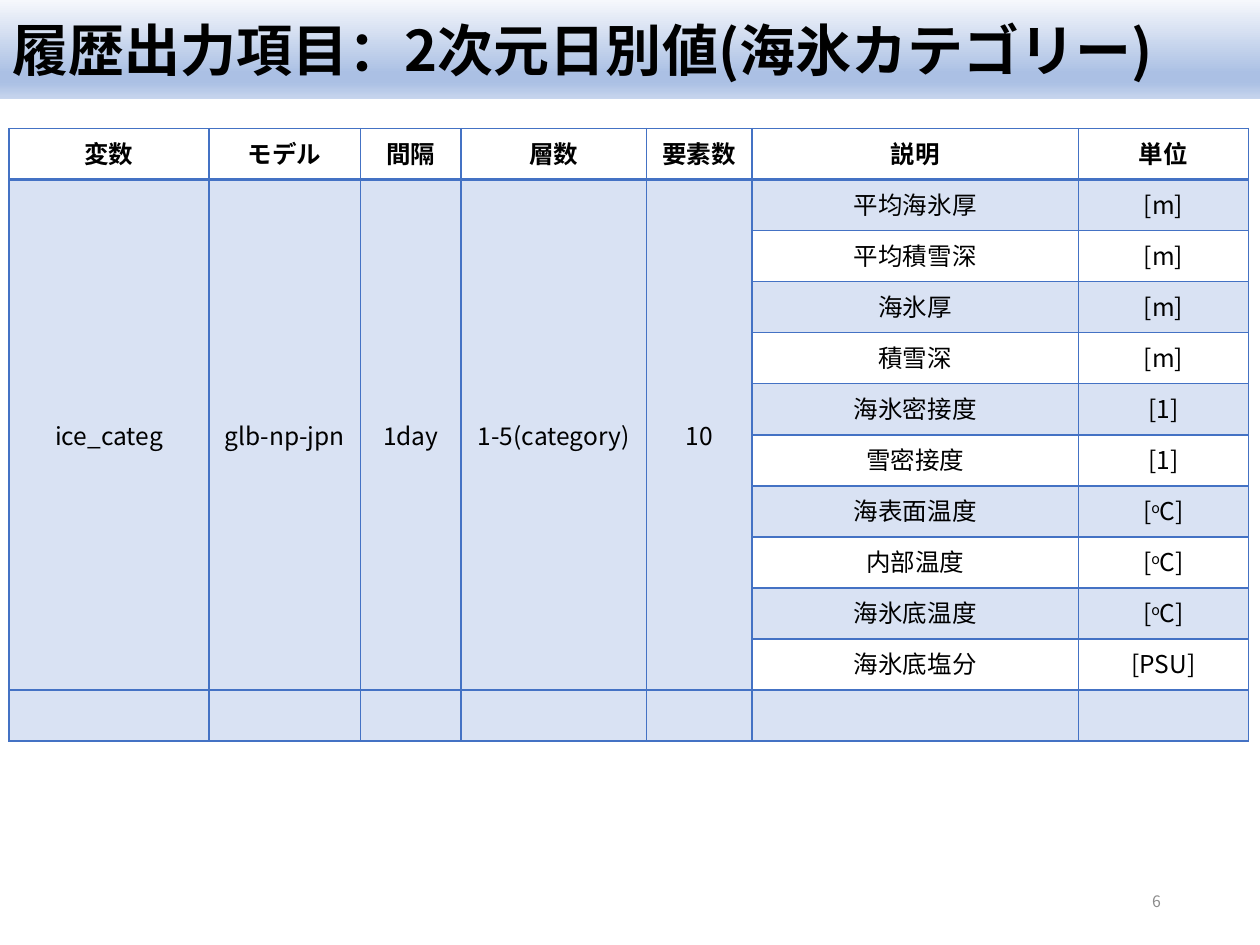
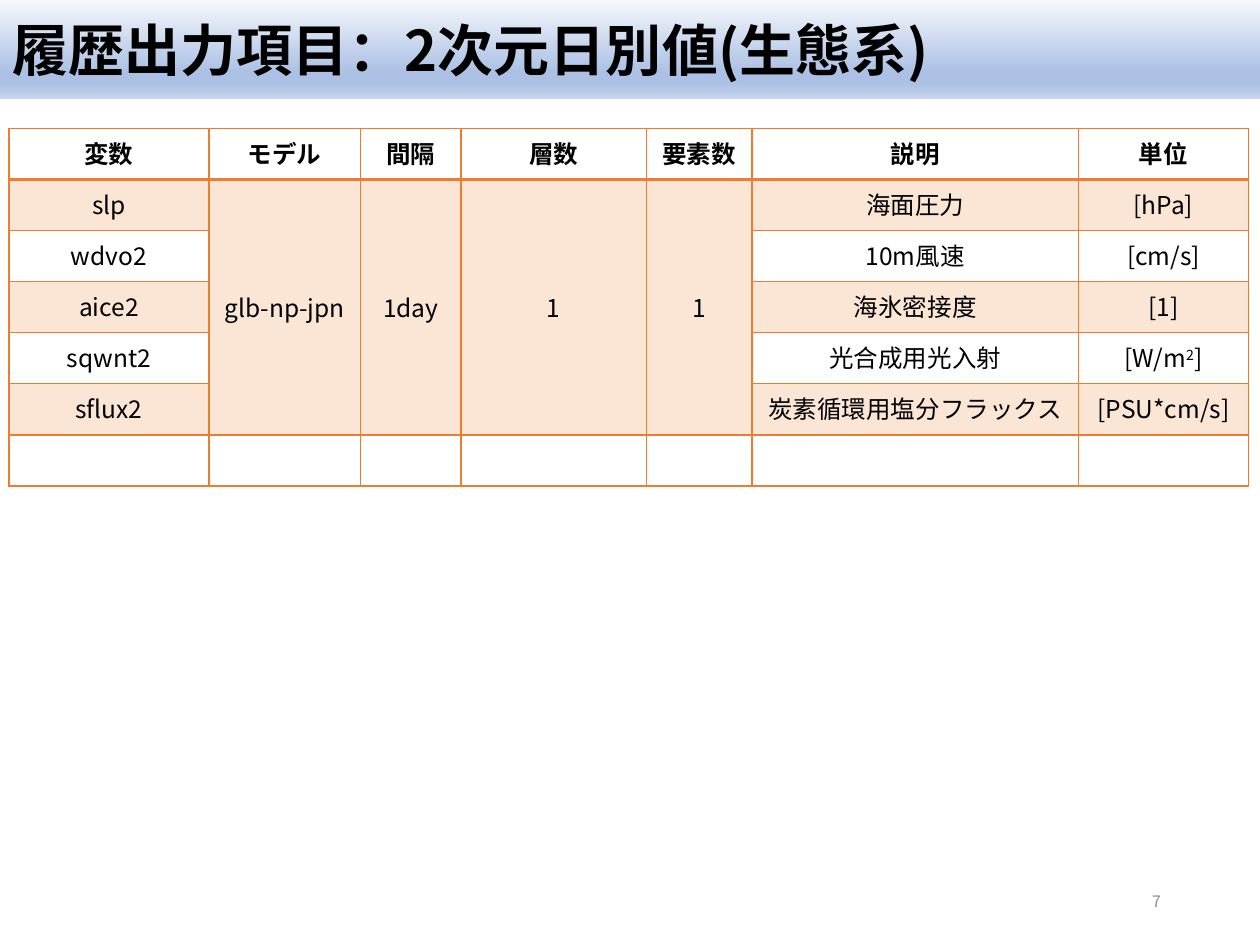
from copy import deepcopy
from dataclasses import dataclass

from lxml import etree
from pptx import Presentation
from pptx.dml.color import RGBColor
from pptx.enum.shapes import MSO_SHAPE
from pptx.enum.text import MSO_ANCHOR, PP_ALIGN
from pptx.oxml.ns import qn
from pptx.util import Inches, Pt

RECT = MSO_SHAPE.RECTANGLE
TOP, MIDDLE = MSO_ANCHOR.TOP, MSO_ANCHOR.MIDDLE
LEFT, CENTER, RIGHT = PP_ALIGN.LEFT, PP_ALIGN.CENTER, PP_ALIGN.RIGHT

FONT = "Noto Sans CJK JP"
COLORS = {
    "text": "000000",
    "number": "8C8C8C",
    "blue": "4472C4",
    "orange": "ED7D31",
}
BAND_STOPS = ((0, "F6F8FC"), (0.74, "ABC0E4"), (0.83, "ABC0E4"), (1, "C7D5ED"))
TINT = 20  # percent opacity of shaded cells

WIDTH, HEIGHT = Inches(10), Inches(7.5)
BAND_HEIGHT = 0.105
TABLE_LEFT, TABLE_TOP = 0.007, 0.136
ROW_HEIGHT = 1 / 18.5
COLUMNS = (
    ("変数", 0.159),
    ("モデル", 0.12),
    ("間隔", 0.08),
    ("層数", 0.147),
    ("要素数", 0.084),
    ("説明", 0.259),
    ("単位", 0.135),
)
CELL_SIZE = 14


@dataclass(frozen=True)
class OutputPage:
    """Superscripts in the texts stand between two ^ marks."""
    topic: str
    number: int
    accent: str
    variables: tuple[str, ...]
    shared: tuple[str, ...]
    items: tuple[tuple[str, str], ...]

    def rows(self) -> list[tuple[str, ...]]:
        blank = ("",) * len(COLUMNS)
        body = []
        for i, item in enumerate(self.items):
            name = self.variables[i] if i < len(self.variables) else ""
            shared = self.shared if i == 0 else ("",) * len(self.shared)
            body.append((name, *shared, *item))
        return [tuple(name for name, _ in COLUMNS), *body, blank]

    def merged_columns(self) -> range:
        first = 0 if len(self.variables) == 1 else 1
        return range(first, 1 + len(self.shared))


PAGES = (
    OutputPage(
        "海氷カテゴリー", 6, "blue",
        ("ice_categ",),
        ("glb-np-jpn", "1day", "1-5(category)", "10"),
        (
            ("平均海氷厚", "[m]"),
            ("平均積雪深", "[m]"),
            ("海氷厚", "[m]"),
            ("積雪深", "[m]"),
            ("海氷密接度", "[1]"),
            ("雪密接度", "[1]"),
            ("海表面温度", "[^o^C]"),
            ("内部温度", "[^o^C]"),
            ("海氷底温度", "[^o^C]"),
            ("海氷底塩分", "[PSU]"),
        ),
    ),
    OutputPage(
        "生態系", 7, "orange",
        ("slp", "wdvo2", "aice2", "sqwnt2", "sflux2"),
        ("glb-np-jpn", "1day", "1", "1"),
        (
            ("海面圧力", "[hPa]"),
            ("10m風速", "[cm/s]"),
            ("海氷密接度", "[1]"),
            ("光合成用光入射", "[W/m^2^]"),
            ("炭素循環用塩分フラックス", "[PSU*cm/s]"),
        ),
    ),
)


def across(share: float) -> int:
    return round(WIDTH * share)


def down(share: float) -> int:
    return round(HEIGHT * share)


def rgb(name: str) -> RGBColor:
    return RGBColor.from_string(COLORS[name])


def write(tf, text: str, *, size: float, color: str = "text",
          bold: bool = False, align=LEFT) -> None:
    p = tf.paragraphs[0]
    p.alignment = align
    if not text:
        etree.SubElement(p._p, qn("a:endParaRPr"), sz=str(size * 100))
        return
    for i, part in enumerate(text.split("^")):
        r = p.add_run()
        r.text = part
        r.font.name = FONT
        r.font.size = Pt(size)
        r.font.bold = bold
        r.font.color.rgb = rgb(color)
        r_pr = r._r.get_or_add_rPr()
        etree.SubElement(r_pr, qn("a:ea"), typeface=FONT)
        if i % 2:
            r_pr.set("baseline", "30000")


def add_title_band(slide, title: str) -> None:
    sp = slide.shapes.add_shape(RECT, 0, 0, WIDTH, down(BAND_HEIGHT))
    sp.shadow.inherit = False
    sp.line.fill.background()
    sp.fill.gradient()
    sp.fill.gradient_angle = 270
    stops = sp._element.spPr.find(".//" + qn("a:gsLst"))
    while len(stops) < len(BAND_STOPS):
        stops.append(deepcopy(stops[0]))
    for stop, (position, color) in zip(sp.fill.gradient_stops, BAND_STOPS):
        stop.position = position
        stop.color.rgb = RGBColor.from_string(color)
    tf = sp.text_frame
    tf.word_wrap = True
    tf.vertical_anchor = MIDDLE
    write(tf, title, size=32, bold=True)


def add_page_number(slide, number: int) -> None:
    box = slide.shapes.add_textbox(across(0.662), down(0.927),
                                   across(0.269), down(0.053))
    tf = box.text_frame
    tf.word_wrap = True
    tf.vertical_anchor = MIDDLE
    write(tf, str(number), size=9, color="number", align=RIGHT)


def set_borders(cell, color: str, widths: dict[str, float]) -> None:
    tc_pr = cell._tc.get_or_add_tcPr()
    for side, width in widths.items():
        ln = etree.SubElement(tc_pr, qn(f"a:ln{side}"), w=str(Pt(width)))
        fill = etree.SubElement(ln, qn("a:solidFill"))
        etree.SubElement(fill, qn("a:srgbClr"), val=COLORS[color])


def set_tint(cell, color: str) -> None:
    cell.fill.solid()
    cell.fill.fore_color.rgb = rgb(color)
    clr = cell._tc.tcPr.find(f"{qn('a:solidFill')}/{qn('a:srgbClr')}")
    etree.SubElement(clr, qn("a:alpha"), val=str(TINT * 1000))


def add_output_table(slide, page: OutputPage) -> None:
    rows = page.rows()
    total = sum(share for _, share in COLUMNS)
    table = slide.shapes.add_table(
        len(rows), len(COLUMNS), across(TABLE_LEFT), down(TABLE_TOP),
        across(total), down(ROW_HEIGHT * len(rows))).table
    table.first_row = table.horz_banding = False
    for column, (_, share) in zip(table.columns, COLUMNS):
        column.width = across(share)
    for row in table.rows:
        row.height = down(ROW_HEIGHT)

    merged = page.merged_columns()
    last_item = len(page.items)
    for y, texts in enumerate(rows):
        for x, text in enumerate(texts):
            cell = table.cell(y, x)
            in_merge = x in merged and 1 <= y <= last_item
            cell.vertical_anchor = MIDDLE if in_merge else TOP
            set_borders(cell, page.accent, {
                "L": 1, "R": 1,
                "T": 2 if y == 1 else 1,
                "B": 2 if y == 0 else 1,
            })
            if y % 2:
                set_tint(cell, page.accent)
            else:
                cell.fill.background()
            write(cell.text_frame, text, size=CELL_SIZE, bold=y == 0,
                  align=CENTER)
    for x in merged:
        table.cell(1, x).merge(table.cell(last_item, x))


def main() -> None:
    prs = Presentation()
    prs.slide_width, prs.slide_height = WIDTH, HEIGHT
    blank = prs.slide_layouts[6]
    for page in PAGES:
        slide = prs.slides.add_slide(blank)
        add_title_band(slide, f"履歴出力項目：2次元日別値({page.topic})")
        add_page_number(slide, page.number)
        add_output_table(slide, page)
    prs.save("out.pptx")


if __name__ == "__main__":
    main()
